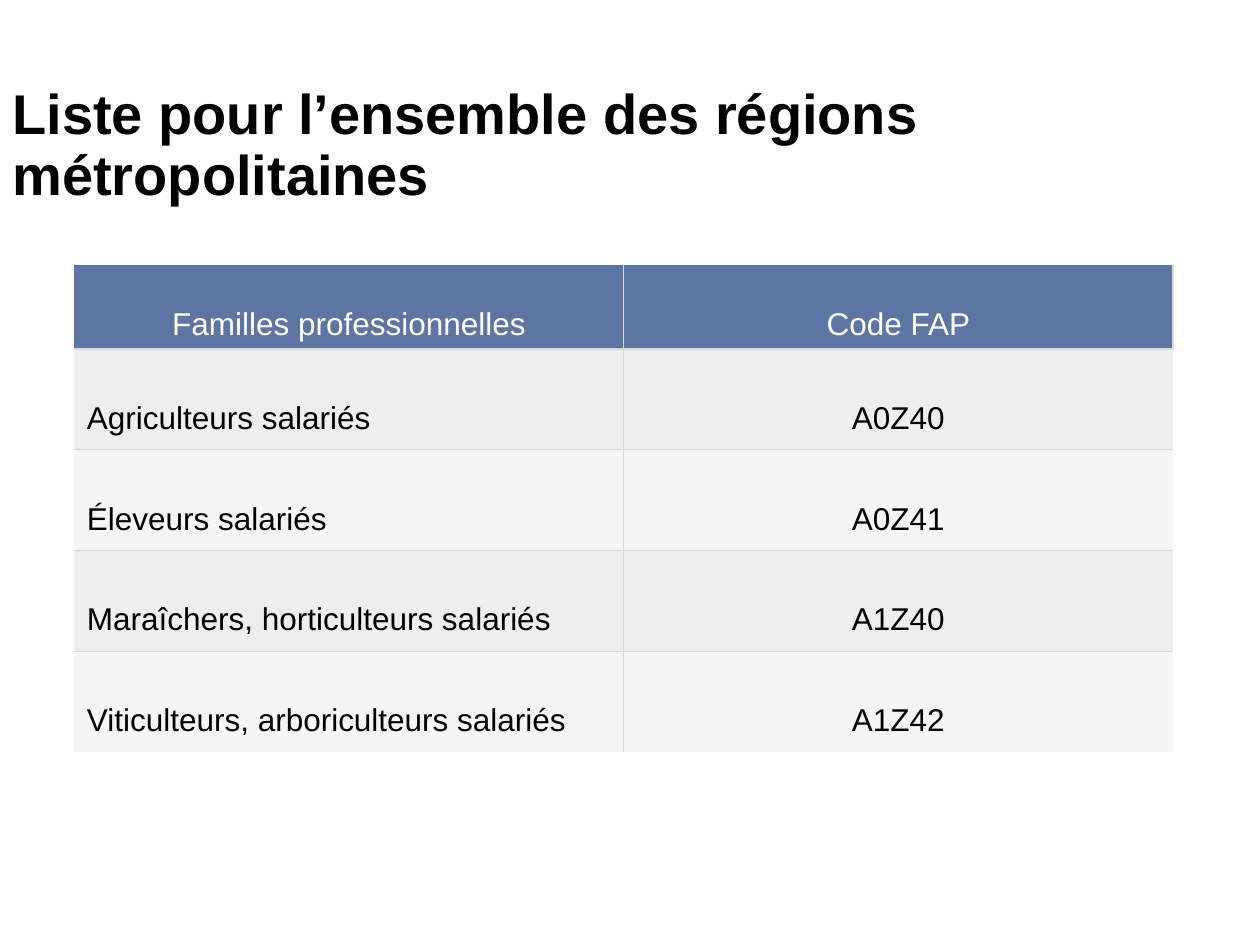
from dataclasses import dataclass

from lxml import etree
from pptx import Presentation
from pptx.dml.color import RGBColor
from pptx.enum.text import MSO_ANCHOR, PP_ALIGN
from pptx.oxml.ns import qn
from pptx.util import Pt

LEFT, CENTER = PP_ALIGN.LEFT, PP_ALIGN.CENTER
MIDDLE, BOTTOM = MSO_ANCHOR.MIDDLE, MSO_ANCHOR.BOTTOM
EMU_PER_PX = 9144
FONT = "Arial"
COLORS = {
    "text": "000000",
    "header_text": "FFFFFF",
    "header": "5C75A2",
    "odd": "EEEEEE",
    "even": "F5F5F5",
    "border": "D8D8D8",
}
COL_W = 436


@dataclass(frozen=True)
class Row:
    family: str
    code: str
    fill: str
    height: int = 80
    margin: int = 10
    bottom: int = 11
    color: str = "text"
    align: PP_ALIGN = LEFT


ROWS = [
    Row("Familles professionnelles", "Code FAP", "header", 67, 5, 5, "header_text", CENTER),
    Row("Agriculteurs salariés", "A0Z40", "odd"),
    Row("Éleveurs salariés", "A0Z41", "even"),
    Row("Maraîchers, horticulteurs salariés", "A1Z40", "odd"),
    Row("Viticulteurs, arboriculteurs salariés", "A1Z42", "even"),
]


def px(n: int) -> int:
    return n * EMU_PER_PX


def rgb(name: str) -> RGBColor:
    return RGBColor.from_string(COLORS[name])


def add_run(p, text: str, size: int, color: str, bold: bool = False) -> None:
    r = p.add_run()
    r.text = text
    r.font.name = FONT
    r.font.size = Pt(size)
    r.font.bold = bold
    r.font.color.rgb = rgb(color)


def add_title(s, text: str) -> None:
    sp = s.shapes.add_textbox(px(0), px(44), px(992), px(145))
    tf = sp.text_frame
    tf.word_wrap = True
    tf.vertical_anchor = MIDDLE
    p = tf.paragraphs[0]
    p.line_spacing = 0.9
    add_run(p, text, 32, "text", True)


def set_borders(cell, edges: dict[str, bool]) -> None:
    tc_pr = cell._tc.get_or_add_tcPr()
    for edge, shown in edges.items():
        ln = etree.SubElement(tc_pr, qn(f"a:ln{edge}"), w=str(Pt(0.75)))
        if shown:
            fill = etree.SubElement(ln, qn("a:solidFill"))
            etree.SubElement(fill, qn("a:srgbClr"), val=COLORS["border"])
        else:
            etree.SubElement(ln, qn("a:noFill"))


def fill_cell(cell, row: Row, text: str, align: PP_ALIGN) -> None:
    cell.fill.solid()
    cell.fill.fore_color.rgb = rgb(row.fill)
    cell.margin_left = cell.margin_right = cell.margin_top = px(row.margin)
    cell.margin_bottom = px(row.bottom)
    cell.vertical_anchor = BOTTOM
    p = cell.text_frame.paragraphs[0]
    p.alignment = align
    add_run(p, text, 18, row.color)


def add_family_table(s, rows: list[Row]) -> None:
    height = sum(row.height for row in rows)
    table = s.shapes.add_table(
        len(rows), 2, px(59), px(210), px(2 * COL_W), px(height)
    ).table
    table.first_row = table.horz_banding = False
    for col in table.columns:
        col.width = px(COL_W)
    for i, row in enumerate(rows):
        table.rows[i].height = px(row.height)
        for j, (text, align) in enumerate([(row.family, row.align), (row.code, CENTER)]):
            cell = table.cell(i, j)
            set_borders(cell, {
                "L": j > 0,
                "R": j == 0 or i == 0,
                "T": i > 0,
                "B": i < len(rows) - 1,
            })
            fill_cell(cell, row, text, align)


def main() -> None:
    prs = Presentation()
    prs.slide_width, prs.slide_height = px(1000), px(750)
    s = prs.slides.add_slide(prs.slide_layouts[6])
    add_title(s, "Liste pour l’ensemble des régions métropolitaines")
    add_family_table(s, ROWS)
    prs.save("out.pptx")


if __name__ == "__main__":
    main()
